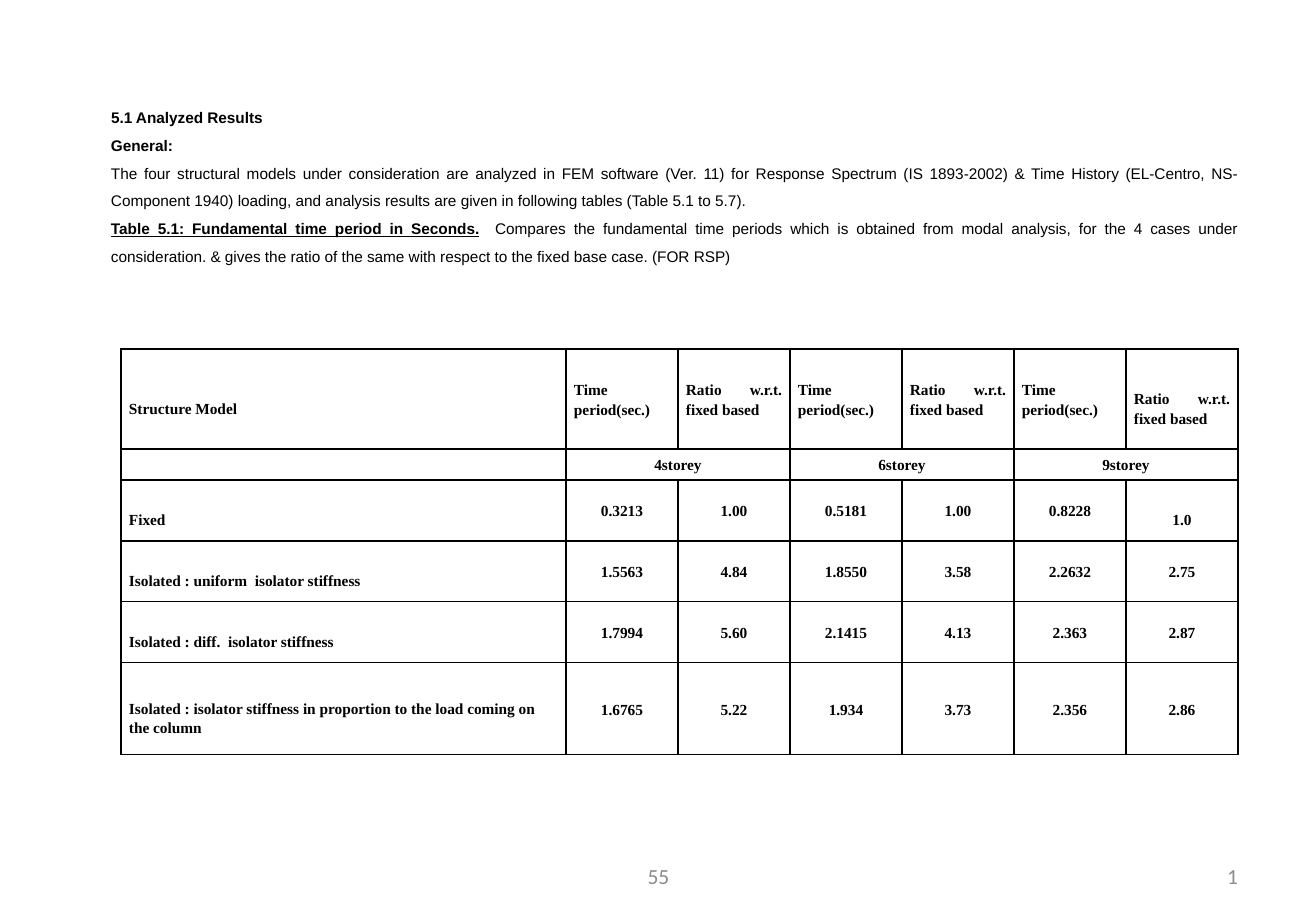
from dataclasses import dataclass

from lxml import etree
from pptx import Presentation
from pptx import util as u
from pptx.dml.color import RGBColor
from pptx.enum import text
from pptx.oxml import parse_xml
from pptx.oxml.ns import nsdecls

PX = 8268  # EMU per px
BLACK, GREY = "000000", "8C8C8C"
LEFT, CENTER, RIGHT, JUSTIFY = (text.PP_ALIGN.LEFT, text.PP_ALIGN.CENTER,
                                text.PP_ALIGN.RIGHT, text.PP_ALIGN.JUSTIFY)
MIDDLE, TOP = text.MSO_ANCHOR.MIDDLE, text.MSO_ANCHOR.TOP


@dataclass
class Box:
    left: int
    top: int
    width: int
    height: int


@dataclass
class PageLabel:
    wording: str
    box: Box
    align: text.PP_ALIGN


@dataclass
class Row:
    height: int
    values: list[str]
    align: text.PP_ALIGN
    lowered: tuple[int, ...] = ()  # columns whose text sits below the middle


TITLE_BOX = Box(98, 92, 1152, 35)
BODY_BOX = Box(98, 127, 1152, 145)
BODY = [
    [("General:", True, False)],
    [("The four structural models under consideration are analyzed in FEM software "
      "(Ver. 11) for Response Spectrum (IS 1893-2002) & Time History (EL-Centro, "
      "NS-Component 1940) loading, and analysis results are given in following "
      "tables (Table 5.1 to 5.7).", False, False)],
    [("Table 5.1: Fundamental time period in Seconds.", True, True),
     ("  Compares the fundamental time periods which is obtained from modal "
      "analysis, for the 4 cases under consideration. & gives the ratio of the "
      "same with respect to the fixed base case. (FOR RSP)", False, False)],
]
PAGE_LABELS = [
    PageLabel("1", Box(943, 851, 308, 49), RIGHT),
    PageLabel("55", Box(450, 851, 417, 49), CENTER),
]
COLUMNS = [445] + [112] * 6
ROWS = [
    Row(100, ["Structure Model"] + ["Time period(sec.)", "Ratio w.r.t. fixed based"] * 3,
        JUSTIFY, (0, 6)),
    Row(31, ["", "4storey", "", "6storey", "", "9storey", ""], CENTER),
    Row(61, ["Fixed", "0.3213", "1.00", "0.5181", "1.00", "0.8228", "1.0"], CENTER, (0, 6)),
    Row(61, ["Isolated : uniform  isolator stiffness",
             "1.5563", "4.84", "1.8550", "3.58", "2.2632", "2.75"], CENTER, (0,)),
    Row(61, ["Isolated : diff.  isolator stiffness",
             "1.7994", "5.60", "2.1415", "4.13", "2.363", "2.87"], CENTER, (0,)),
    Row(92, ["Isolated : isolator stiffness in proportion to the load coming on the column",
             "1.6765", "5.22", "1.934", "3.73", "2.356", "2.86"], CENTER, (0,)),
]
STOREY_ROW = 1


def px(n: int) -> u.Emu:
    return u.Emu(n * PX)


def rgb(color: str) -> RGBColor:
    return RGBColor.from_string(color)


def format_run(r, font: str, size: int, color: str, bold: bool = False,
               underline: bool = False) -> None:
    r.font.name, r.font.size = font, u.Pt(size)
    r.font.bold, r.font.underline = bold, underline
    r.font.color.rgb = rgb(color)


def place(sp, box: Box) -> None:
    sp.left, sp.top = px(box.left), px(box.top)
    sp.width, sp.height = px(box.width), px(box.height)


def set_frame(tf, anchor: text.MSO_ANCHOR, top: int, bottom: int) -> None:
    tf.word_wrap = True
    tf.auto_size = text.MSO_AUTO_SIZE.NONE
    tf.vertical_anchor = anchor
    tf.margin_left = tf.margin_right = px(13)
    tf.margin_top, tf.margin_bottom = px(top), px(bottom)


def add_text_box(s, box: Box):
    return s.shapes.add_textbox(px(box.left), px(box.top), px(box.width), px(box.height))


def add_title(s, wording: str) -> None:
    sp = s.shapes.title
    place(sp, TITLE_BOX)
    set_frame(sp.text_frame, TOP, 7, 0)
    sp.text_frame.text = wording
    p = sp.text_frame.paragraphs[0]
    p.alignment, p.line_spacing = JUSTIFY, 1.5
    format_run(p.runs[0], "Arial", 10, BLACK, True)


def add_body(s) -> None:
    tf = add_text_box(s, BODY_BOX).text_frame
    set_frame(tf, TOP, 0, 7)
    tf.text = "\n".join("" for _ in BODY)
    for p, pieces in zip(tf.paragraphs, BODY):
        p.alignment, p.line_spacing = JUSTIFY, 1.5
        for wording, bold, underline in pieces:
            r = p.add_run()
            r.text = wording
            format_run(r, "Arial", 10, BLACK, bold, underline)


def add_page_label(s, label: PageLabel) -> None:
    tf = add_text_box(s, label.box).text_frame
    set_frame(tf, MIDDLE, 7, 7)
    tf.text = label.wording
    p = tf.paragraphs[0]
    p.alignment = label.align
    format_run(p.runs[0], "Calibri", 14, GREY)


def add_borders(cell) -> None:
    tc_pr = cell._tc.get_or_add_tcPr()
    for side in ("lnL", "lnR", "lnT", "lnB"):
        tc_pr.append(parse_xml(
            f'<a:{side} {nsdecls("a")} w="{u.Pt(1)}"><a:solidFill>'
            f'<a:srgbClr val="{BLACK}"/></a:solidFill></a:{side}>'))


def fill_cell(cell, wording: str, align: text.PP_ALIGN, lowered: bool) -> None:
    add_borders(cell)
    cell.fill.background()
    cell.vertical_anchor = MIDDLE
    cell.margin_left = cell.margin_right = px(8)
    cell.margin_top, cell.margin_bottom = px(18 if lowered else 0), 0
    cell.text_frame.text = wording
    p = cell.text_frame.paragraphs[0]
    p.alignment, p.line_spacing = align, 1.15
    for r in p.runs:
        format_run(r, "Times New Roman", 10, BLACK, True)
    if not wording:  # keeps an empty cell from stretching its row
        etree.SubElement(p._p, "{http://schemas.openxmlformats.org/drawingml/2006/main}"
                               "endParaRPr", sz="1000")


def add_period_table(s) -> None:
    frame = s.shapes.add_table(len(ROWS), len(COLUMNS), px(121), px(349),
                               px(sum(COLUMNS)), px(sum(row.height for row in ROWS)))
    table = frame.table
    table.first_row = table.horz_banding = False
    for column, width in zip(table.columns, COLUMNS):
        column.width = px(width)
    for i, row in enumerate(ROWS):
        table.rows[i].height = px(row.height)
        for j, wording in enumerate(row.values):
            align = LEFT if j == 0 and i > 0 else row.align
            fill_cell(table.cell(i, j), wording, align, j in row.lowered)
    for j in range(1, len(COLUMNS), 2):
        table.cell(STOREY_ROW, j).merge(table.cell(STOREY_ROW, j + 1))


def main() -> None:
    prs = Presentation()
    prs.slide_width, prs.slide_height = px(1316), px(918)
    s = prs.slides.add_slide(prs.slide_layouts[5])  # title only

    # Heading and introduction
    add_title(s, "5.1 Analyzed Results")
    add_body(s)

    # Time periods and ratios
    add_period_table(s)

    # Page numbers
    for label in PAGE_LABELS:
        add_page_label(s, label)

    prs.save("out.pptx")


if __name__ == "__main__":
    main()
